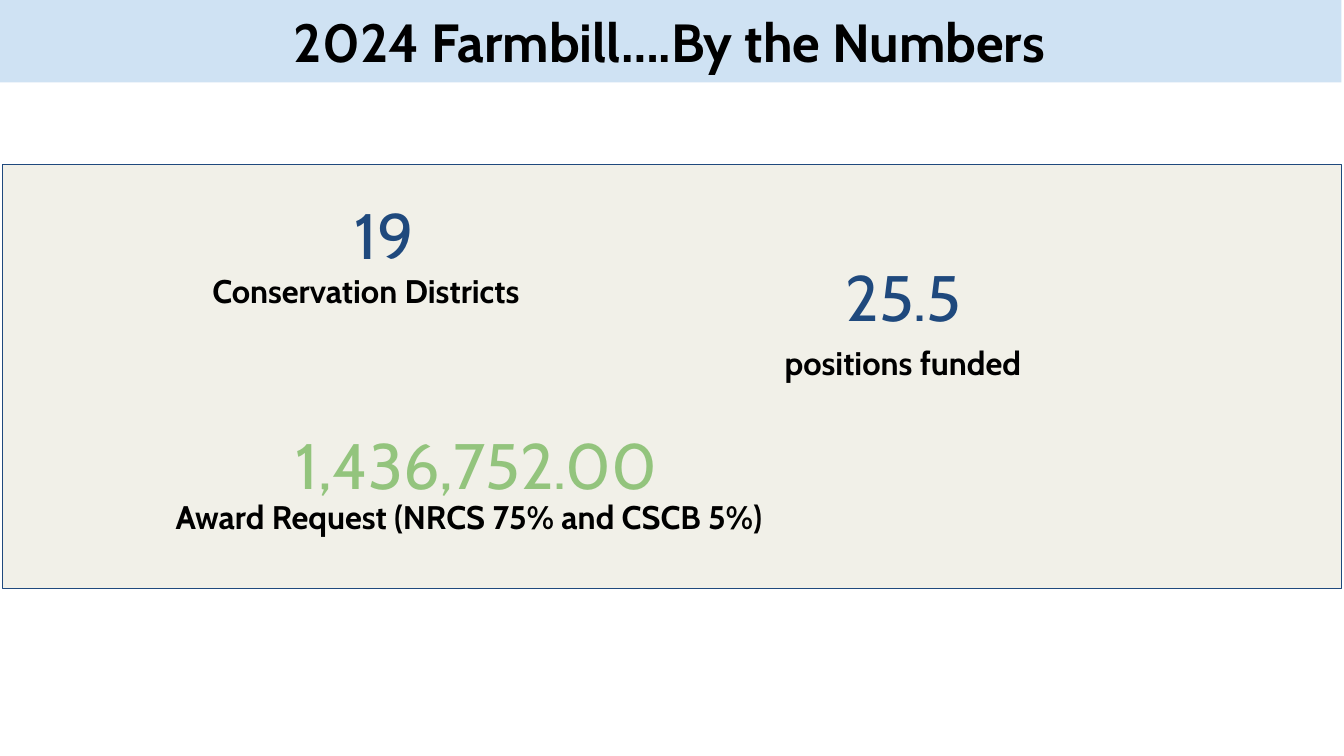
from pptx import Presentation
from pptx.dml.color import RGBColor
from pptx.enum.shapes import MSO_SHAPE
from pptx.enum.text import MSO_ANCHOR, PP_ALIGN
from pptx.util import Cm, Pt

FONT = "Cabin"
BLACK, NAVY, GREEN = "000000", "1F497D", "93C47D"
PANEL_FILL, BANNER_FILL = "F1F0E8", "CFE2F3"
LEFT, CENTER = PP_ALIGN.LEFT, PP_ALIGN.CENTER
NUMBER_SIZE, LABEL_SIZE, TITLE_SIZE = 55, 28, 46

TITLE = "2024 Farmbill….By the Numbers"
PANEL_AREA = (0.08, 4.98, 40.49, 12.8)
BANNER_AREA = (-0.08, 0, 40.64, 2.49)

FIGURES = [
    {
        "number": ("19", NAVY, CENTER, (10.21, 5.66, 2.84, 2.79)),
        "label": ("Conservation Districts", LEFT, (6.17, 7.95, 11.96, 1.83)),
    },
    {
        "number": ("1,436,752.00", GREEN, LEFT, (8.69, 12.62, 13.11, 2.87)),
        "label": ("Award Request (NRCS 75% and CSCB 5%) ", CENTER, (1.02, 14.76, 26.54, 1.7)),
    },
    {
        "number": ("25.5", NAVY, CENTER, (24.87, 7.52, 4.9, 2.87)),
        "label": ("positions funded", CENTER, (21.79, 10.11, 11.02, 1.7)),
    },
]


def color(value):
    return RGBColor.from_string(value)


def place(area):
    return [Cm(length) for length in area]


def write(shape, text, size, text_color, align, bold):
    frame = shape.text_frame
    frame.word_wrap = True
    frame.vertical_anchor = MSO_ANCHOR.TOP
    frame.margin_left = frame.margin_right = Cm(0.25)
    frame.margin_top = frame.margin_bottom = Cm(0.25)
    para = frame.paragraphs[0]
    para.text = text
    para.alignment = align
    para.font.name = FONT
    para.font.size = Pt(size)
    para.font.bold = bold
    para.font.color.rgb = color(text_color)


def add_rectangle(page, area, fill):
    box = page.shapes.add_shape(MSO_SHAPE.RECTANGLE, *place(area))
    box.shadow.inherit = False
    box.fill.solid()
    box.fill.fore_color.rgb = color(fill)
    box.line.fill.background()
    return box


def add_figure(page, figure):
    group = page.shapes.add_group_shape()
    text, align, area = figure["label"]
    label = group.shapes.add_textbox(*place(area))
    write(label, text, LABEL_SIZE, BLACK, align, True)
    text, text_color, align, area = figure["number"]
    number = group.shapes.add_textbox(*place(area))
    write(number, text, NUMBER_SIZE, text_color, align, False)


def main():
    deck = Presentation()
    deck.slide_width, deck.slide_height = Cm(40.64), Cm(22.86)
    page = deck.slides.add_slide(deck.slide_layouts[6])

    panel = add_rectangle(page, PANEL_AREA, PANEL_FILL)
    panel.line.color.rgb = color(NAVY)
    panel.line.width = Pt(0.75)

    banner = add_rectangle(page, BANNER_AREA, BANNER_FILL)
    write(banner, TITLE, TITLE_SIZE, BLACK, CENTER, True)
    banner.text_frame.vertical_anchor = MSO_ANCHOR.MIDDLE

    for figure in FIGURES:
        add_figure(page, figure)

    deck.save("out.pptx")


if __name__ == "__main__":
    main()
